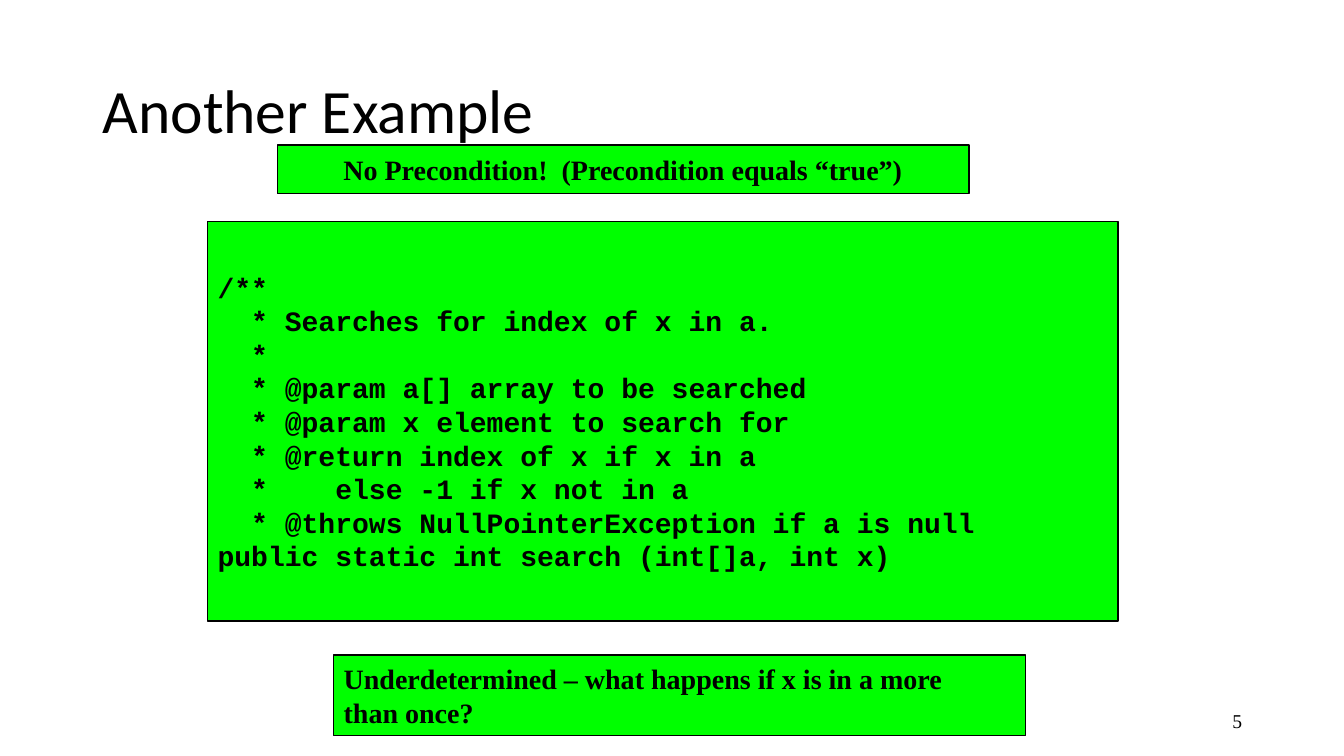
from dataclasses import dataclass

import pptx
import pptx.dml.color
import pptx.enum.shapes
import pptx.enum.text
import pptx.util

EMU_PER_PX = 9144  # 100 px to the inch
BLANK_LAYOUT = 6

BLACK = pptx.dml.color.RGBColor(0x00, 0x00, 0x00)
GREEN = pptx.dml.color.RGBColor(0x00, 0xFF, 0x00)

LEFT = pptx.enum.text.PP_ALIGN.LEFT
CENTER = pptx.enum.text.PP_ALIGN.CENTER
RIGHT = pptx.enum.text.PP_ALIGN.RIGHT


@dataclass(frozen=True)
class TextBlock:
    left: int
    top: int
    width: int
    height: int
    lines: tuple[str, ...]
    font: str = "Times New Roman"
    size: int = 20
    bold: bool = False
    align: pptx.enum.text.PP_ALIGN = LEFT
    line_spacing: float = 1.0
    boxed: bool = False


PAGE_NUMBER = TextBlock(942, 695, 300, 40, ("5",), size=14, align=RIGHT)
TITLE = TextBlock(92, 40, 1150, 145, ("Another Example",),
                  font="Calibri", size=44, line_spacing=0.9)
SEARCH_CONTRACT = TextBlock(
    206, 220, 903, 396,
    (
        "/**",
        "  * Searches for index of x in a.",
        "  *",
        "  * @param a[] array to be searched",
        "  * @param x element to search for",
        "  * @return index of x if x in a",
        "  *    else -1 if x not in a",
        "  * @throws NullPointerException if a is null",
        "public static int search (int[]a, int x)",
    ),
    font="Courier New", bold=True, boxed=True,
)
PRECONDITION = TextBlock(
    275, 144, 686, 48,
    ("No Precondition!  (Precondition equals “true”)",),
    bold=True, align=CENTER, boxed=True,
)
UNDERDETERMINED = TextBlock(
    331, 650, 686, 80,
    ("Underdetermined – what happens if x is in a more", "than once?"),
    bold=True, boxed=True,
)


def px(length: int) -> pptx.util.Emu:
    return pptx.util.Emu(length * EMU_PER_PX)


def draw_block(slide: pptx.slide.Slide, block: TextBlock) -> None:
    bounds = [px(n) for n in (block.left, block.top, block.width, block.height)]
    if block.boxed:
        holder = slide.shapes.add_shape(
            pptx.enum.shapes.MSO_SHAPE.RECTANGLE, *bounds)
        holder.shadow.inherit = False
        holder.fill.solid()
        holder.fill.fore_color.rgb = GREEN
        holder.line.color.rgb = BLACK
        holder.line.width = pptx.util.Pt(1)
    else:
        holder = slide.shapes.add_textbox(*bounds)

    frame = holder.text_frame
    frame.word_wrap = True
    frame.vertical_anchor = pptx.enum.text.MSO_ANCHOR.MIDDLE
    for index, line in enumerate(block.lines):
        paragraph = frame.add_paragraph() if index else frame.paragraphs[0]
        paragraph.alignment = block.align
        paragraph.line_spacing = block.line_spacing
        run = paragraph.add_run()
        run.text = line
        run.font.name = block.font
        run.font.size = pptx.util.Pt(block.size)
        run.font.bold = block.bold
        run.font.color.rgb = BLACK


def main() -> None:
    presentation = pptx.Presentation()
    presentation.slide_width = px(1333)
    presentation.slide_height = px(750)
    slide = presentation.slides.add_slide(
        presentation.slide_layouts[BLANK_LAYOUT])
    for block in (PAGE_NUMBER, TITLE, SEARCH_CONTRACT, PRECONDITION,
                  UNDERDETERMINED):
        draw_block(slide, block)
    presentation.save("out.pptx")


if __name__ == "__main__":
    main()
